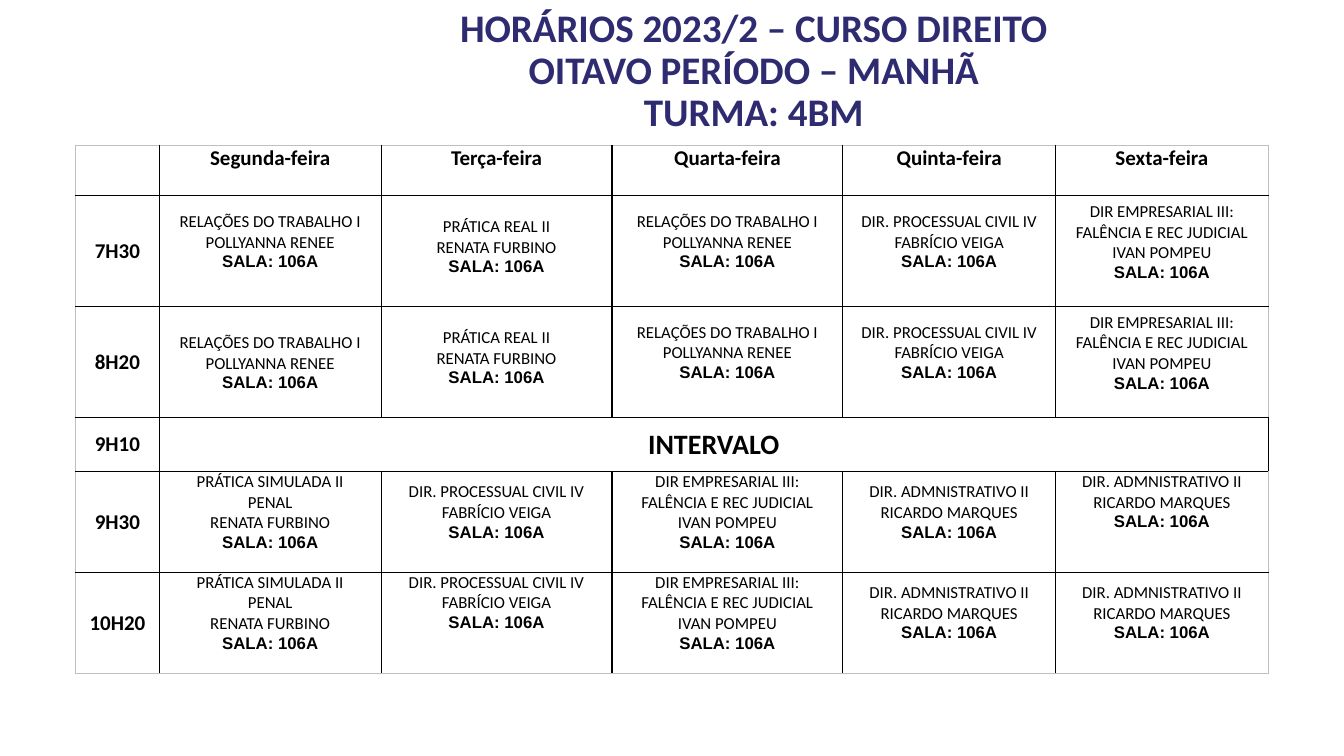
import lxml.etree
import pptx
import pptx.dml.color
import pptx.enum.text
import pptx.oxml.ns
import pptx.util

Inches = pptx.util.Inches
Pt = pptx.util.Pt
ALIGN = pptx.enum.text.PP_ALIGN
ANCHOR = pptx.enum.text.MSO_ANCHOR
COLORS = {"title": "2E2B71", "text": "000000", "border": "000000", "outline": "BFBFBF"}
ROOM = "SALA: 106A"

LABOUR = ["RELAÇÕES DO TRABALHO I", "POLLYANNA RENEE"]
PRACTICE = ["PRÁTICA REAL II", "RENATA FURBINO"]
CIVIL = ["DIR. PROCESSUAL CIVIL IV", "FABRÍCIO VEIGA"]
BUSINESS = ["DIR EMPRESARIAL III:", "FALÊNCIA E REC JUDICIAL", "IVAN POMPEU"]
PENAL = ["PRÁTICA SIMULADA II", "PENAL", "RENATA FURBINO"]
ADMIN = ["DIR. ADMNISTRATIVO II", "RICARDO MARQUES"]

DAYS = ["Segunda-feira", "Terça-feira", "Quarta-feira", "Quinta-feira", "Sexta-feira"]
DAY_WIDTHS = [0.83, 2.2, 2.29, 2.29, 2.11, 2.11]
HEADER_HEIGHT = 0.5
SCHEDULE = [
    ("7H30", 1.1, [(LABOUR, 0.16), (PRACTICE, 0.21), (LABOUR, 0.16), (CIVIL, 0.16), (BUSINESS, 0.06)]),
    ("8H20", 1.1, [(LABOUR, 0.26), (PRACTICE, 0.21), (LABOUR, 0.16), (CIVIL, 0.16), (BUSINESS, 0.06)]),
    ("9H10", 0.54, None),
    ("9H30", 1.0, [(PENAL, 0), (CIVIL, 0.1), (BUSINESS, 0), (ADMIN, 0.1), (ADMIN, 0)]),
    ("10H20", 1.0, [(PENAL, 0), (CIVIL, 0), (BUSINESS, 0), (ADMIN, 0.1), (ADMIN, 0.1)]),
]


def add_run(paragraph, words, size, color, bold=True, font="Calibri"):
    run = paragraph.add_run()
    run.text = words
    run.font.size = Pt(size)
    run.font.name = font
    run.font.bold = bold
    run.font.color.rgb = pptx.dml.color.RGBColor.from_string(COLORS[color])


def add_title(slide, left, top, width, height, lines):
    heading = slide.shapes.add_textbox(Inches(left), Inches(top), Inches(width), Inches(height)).text_frame
    heading.word_wrap = True
    heading.margin_top = heading.margin_bottom = 0
    heading.vertical_anchor = ANCHOR.MIDDLE
    paragraph = heading.paragraphs[0]
    paragraph.alignment = ALIGN.CENTER
    paragraph.line_spacing = 0.9
    for index, line in enumerate(lines):
        if index:
            paragraph.add_line_break()
        add_run(paragraph, line, 27.9, "title")


def set_borders(cell, sides):
    properties = cell._tc.get_or_add_tcPr()
    for position, (side, color) in enumerate(sides.items()):
        border = lxml.etree.Element(pptx.oxml.ns.qn("a:" + side), w=str(Pt(1)))
        fill = lxml.etree.SubElement(border, pptx.oxml.ns.qn("a:solidFill"))
        lxml.etree.SubElement(fill, pptx.oxml.ns.qn("a:srgbClr"), val=COLORS[color])
        properties.insert(position, border)


def write_cell(cell, lines, anchor, offset=0):
    cell.vertical_anchor = anchor
    cell.margin_top = Inches(offset)
    for index, (words, style) in enumerate(lines):
        frame = cell.text_frame
        paragraph = frame.add_paragraph() if index else frame.paragraphs[0]
        paragraph.alignment = ALIGN.CENTER
        add_run(paragraph, words, color="text", **style)


def write_class(cell, subject, offset):
    lines = [(line, {"size": 12, "bold": False}) for line in subject]
    lines.append((ROOM, {"size": 12, "font": "Arial"}))
    write_cell(cell, lines, ANCHOR.TOP, offset)


def add_timetable(slide, left, top):
    heights = [HEADER_HEIGHT] + [height for _, height, _ in SCHEDULE]
    timetable = slide.shapes.add_table(
        len(heights), len(DAY_WIDTHS), Inches(left), Inches(top),
        Inches(sum(DAY_WIDTHS)), Inches(sum(heights))).table
    timetable.first_row = timetable.horz_banding = False
    for column, width in zip(timetable.columns, DAY_WIDTHS):
        column.width = Inches(width)
    last_row, last_column = len(heights) - 1, len(DAY_WIDTHS) - 1
    for r, height in enumerate(heights):
        timetable.rows[r].height = Inches(height)
        for c in range(len(DAY_WIDTHS)):
            cell = timetable.cell(r, c)
            cell.margin_left = cell.margin_right = Inches(0.05)
            cell.margin_top = cell.margin_bottom = 0
            cell.fill.background()
            outer = {"lnL": c == 0, "lnR": c == last_column, "lnT": r == 0, "lnB": r == last_row}
            set_borders(cell, {side: "outline" if edge else "border" for side, edge in outer.items()})
    for c, day in enumerate(DAYS, 1):
        write_cell(timetable.cell(0, c), [(day, {"size": 15})], ANCHOR.TOP)
    for r, (hour, _, classes) in enumerate(SCHEDULE, 1):
        write_cell(timetable.cell(r, 0), [(hour, {"size": 15})], ANCHOR.MIDDLE)
        if classes is None:
            timetable.cell(r, 1).merge(timetable.cell(r, last_column))
            write_cell(timetable.cell(r, 1), [("INTERVALO", {"size": 20})], ANCHOR.MIDDLE)
            continue
        for c, (subject, offset) in enumerate(classes, 1):
            write_class(timetable.cell(r, c), subject, offset)


def main():
    deck = pptx.Presentation()
    deck.slide_width, deck.slide_height = Inches(13.33), Inches(7.5)
    slide = deck.slides.add_slide(deck.slide_layouts[6])
    add_title(slide, 3.28, 0.07, 8.39, 1.28,
              ["HORÁRIOS 2023/2 – CURSO DIREITO", "OITAVO PERÍODO – MANHÃ", "TURMA: 4BM"])
    add_timetable(slide, 0.75, 1.44)
    deck.save("out.pptx")


if __name__ == "__main__":
    main()
